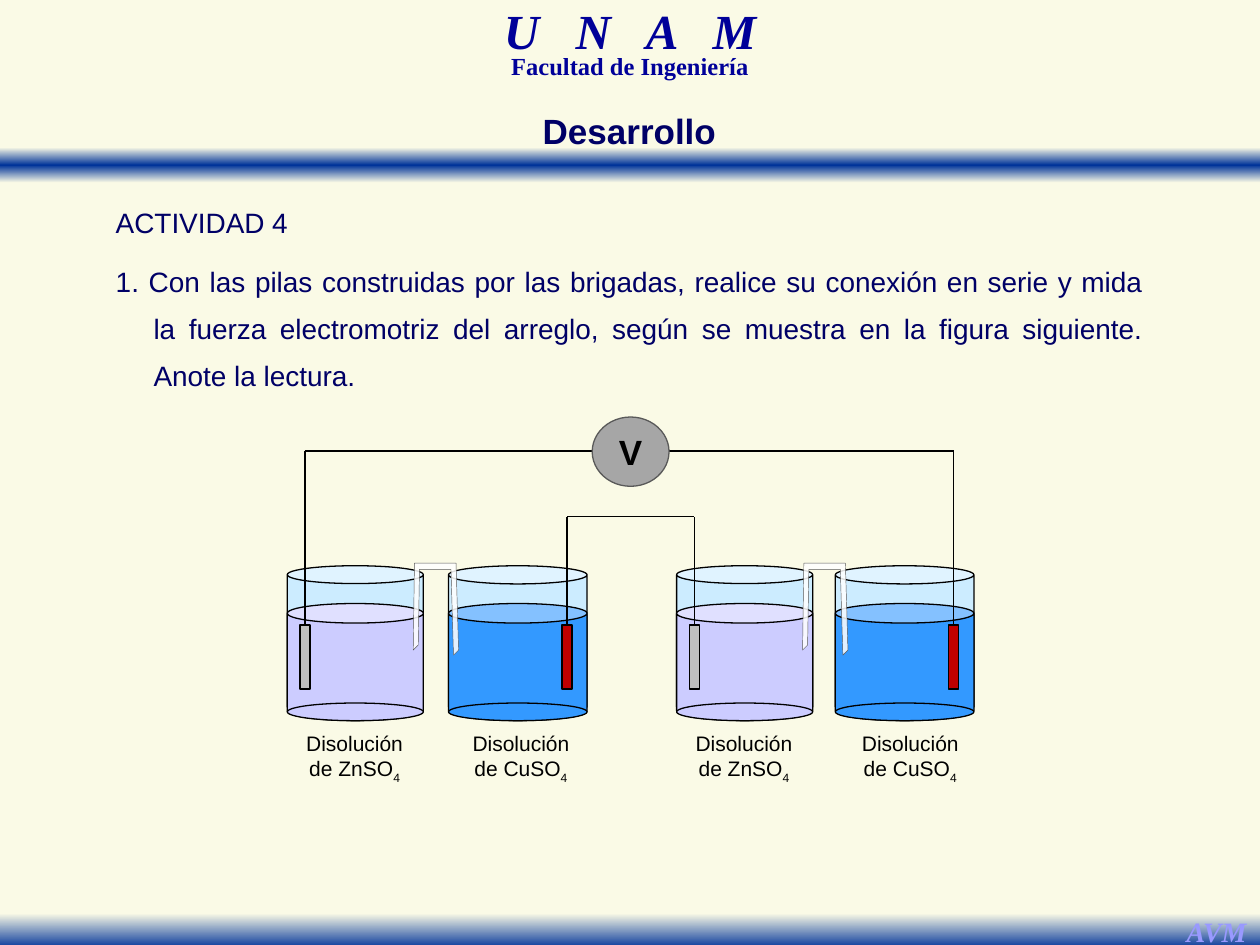
from typing import NamedTuple

from lxml.etree import SubElement
from pptx import Presentation
from pptx.dml.color import RGBColor
from pptx.enum.shapes import MSO_CONNECTOR as Link, MSO_SHAPE as Kind
from pptx.enum.text import MSO_ANCHOR as Anchor, MSO_AUTO_SIZE as Auto, PP_ALIGN as Align
from pptx.oxml import parse_xml
from pptx.oxml.ns import nsdecls, qn
from pptx.util import Pt

PX = 9144
CREAM, BLUE, NAVY, BLACK = "FAFAE6", "003399", "000066", "000000"
SANS, SERIF = "Arial", "Times New Roman"
BRIDGE = [(4, 65), (0, 69), (1, 0), (34, 0), (36, 69), (32, 73), (30, 5), (5, 5)]


class Box(NamedTuple):
    x: int
    y: int
    w: int
    h: int

    def emu(self) -> list[int]:
        return [v * PX for v in self]


class Style(NamedTuple):
    size: int
    color: str
    face: str = SANS
    bold: bool = False
    slant: bool = False


class Cell(NamedTuple):
    x: int
    w: int
    fluid: str
    salt: str
    label: int
    rod: int
    metal: str
    wire: int


ZINC, COPPER = ("CCCCFF", "de ZnSO"), ("3399FF", "de CuSO")
CELLS = [
    Cell(228, 108, *ZINC, 233, 238, "BFBFBF", 358),
    Cell(356, 110, *COPPER, 365, 446, "C00000", 410),
    Cell(537, 108, *ZINC, 542, 547, "BFBFBF", 410),
    Cell(663, 110, *COPPER, 674, 753, "C00000", 358),
]


def rgb(code: str) -> RGBColor:
    """Turn a hex string into a colour."""
    return RGBColor.from_string(code)


def style(para, look: Style, align=Align.CENTER) -> None:
    """Format one paragraph."""
    para.alignment = align
    font = para.font
    font.size, font.name = Pt(look.size), look.face
    font.bold, font.italic = look.bold, look.slant
    font.color.rgb = rgb(look.color)


def text(slide, box: Box, lines: list[str], look: Style, align=Align.CENTER, wrap=True):
    """Add a text box and return its frame."""
    frame = slide.shapes.add_textbox(*box.emu()).text_frame
    frame.word_wrap = wrap
    frame.text = "\n".join(lines)
    for para in frame.paragraphs:
        style(para, look, align)
    return frame


def paint(shape, fill: str, line: str = BLACK, width: float = 0.75) -> None:
    """Give a shape a flat fill and a thin line."""
    shape.shadow.inherit = False
    shape.fill.solid()
    shape.fill.fore_color.rgb = rgb(fill)
    shape.line.color.rgb = rgb(line)
    shape.line.width = Pt(width)


def solid(slide, kind, box: Box, fill: str, line: str = BLACK):
    """Add a filled preset shape."""
    shape = slide.shapes.add_shape(kind, *box.emu())
    paint(shape, fill, line)
    return shape


def band(slide, box: Box, stops: list[tuple[int, str]]) -> None:
    """Add a bar with a vertical gradient."""
    bar = slide.shapes.add_shape(Kind.RECTANGLE, *box.emu())
    bar.shadow.inherit = False
    bar.line.fill.background()
    bar.fill.background()
    marks = "".join(
        f'<a:gs pos="{pos * 1000}"><a:srgbClr val="{code}"/></a:gs>' for pos, code in stops
    )
    grad = parse_xml(
        f'<a:gradFill {nsdecls("a")}><a:gsLst>{marks}</a:gsLst>'
        '<a:lin ang="5400000" scaled="0"/></a:gradFill>'
    )
    props = bar._element.spPr
    props.replace(props.find(qn("a:noFill")), grad)


def wire(slide, x1: int, y1: int, x2: int, y2: int):
    """Add a thin black line."""
    line = slide.shapes.add_connector(Link.STRAIGHT, *(v * PX for v in (x1, y1, x2, y2)))
    line.line.color.rgb = rgb(BLACK)
    line.line.width = Pt(0.75)
    SubElement(line._element.spPr, qn("a:effectLst"))
    return line


def beaker(slide, cell: Cell) -> None:
    """Draw a beaker, its electrode, its wire and its label."""
    x, w = cell.x, cell.w
    for y, h, adj, fill in ((449, 119, 0.131, "CCECFF"), (479, 93, 0.167, cell.fluid)):
        solid(slide, Kind.CAN, Box(x, y, w, h), fill).adjustments[0] = adj
    solid(slide, Kind.OVAL, Box(x, 558, w, 14), cell.fluid)
    rod = solid(slide, Kind.RECTANGLE, Box(cell.rod, 496, 8, 51), cell.metal)
    mid = cell.rod + 4
    wire(slide, mid, 496, mid, cell.wire).begin_connect(rod, 0)
    box = Box(cell.label, 575, 97, 50)
    frame = text(slide, box, ["Disolución", cell.salt], Style(12, BLACK), wrap=False)
    sub = frame.paragraphs[1].add_run()
    sub.text = "4"
    sub._r.get_or_add_rPr().set("baseline", "-25000")


def bridge(slide, x: int, y: int) -> None:
    """Draw a translucent salt bridge."""
    first, *rest = [(x + dx, y + dy) for dx, dy in BRIDGE]
    path = slide.shapes.build_freeform(*first, scale=PX)
    path.add_line_segments(rest, close=True)
    shape = path.convert_to_shape()
    paint(shape, "FFFFFF", "595959", 0.25)
    tint = shape._element.spPr.find(qn("a:solidFill"))[0]
    SubElement(tint, qn("a:alpha")).set("val", "86000")


def frame_page(slide) -> None:
    """Draw the bands, the school's heading and the signature."""
    band(slide, Box(0, 117, 1000, 28), [(0, CREAM), (50, BLUE), (100, CREAM)])
    band(slide, Box(0, 725, 1000, 28), [(0, CREAM), (100, BLUE)])
    school = Style(28, "000099", SERIF, True, True)
    head = text(slide, Box(304, 8, 392, 43), ["U N A M"], school).paragraphs[0]
    head._p.pPr.find(qn("a:defRPr")).set("spc", "700")
    unit = Style(14, "000099", SERIF, True)
    sub = text(slide, Box(321, 42, 358, 26), ["Facultad de Ingeniería"], unit).paragraphs[0]
    head.line_spacing = sub.line_spacing = 0.7
    sign = Style(16, "9999FF", SERIF, True, True)
    text(slide, Box(931, 721, 69, 37), ["AVM"], sign, wrap=False)


def write(slide) -> None:
    """Place the title and the instructions."""
    title = slide.shapes.title
    title.left, title.top, title.width, title.height = Box(420, 82, 159, 44).emu()
    frame = title.text_frame
    frame.text = "Desarrollo"
    frame.word_wrap, frame.auto_size = False, Auto.NONE
    frame.vertical_anchor = Anchor.TOP
    style(frame.paragraphs[0], Style(20, NAVY, bold=True))
    slide.shapes._spTree.append(title._element)
    task = (
        "1. Con las pilas construidas por las brigadas, realice su conexión en serie "
        "y mida la fuerza electromotriz del arreglo, según se muestra en la figura "
        "siguiente. Anote la lectura."
    )
    box = Box(82, 148, 835, 167)
    body = text(slide, box, ["ACTIVIDAD 4", task], Style(16, NAVY), Align.JUSTIFY)
    for para in body.paragraphs:
        para.line_spacing, para.space_after = 1.4, Pt(6.4)
        para._p.pPr.set("marL", str(30 * PX))
        para._p.pPr.set("indent", str(-30 * PX))


def circuit(slide) -> None:
    """Draw the two cells in series with the voltmeter."""
    for cell in CELLS:
        beaker(slide, cell)
    for one, two in ((0, 3), (1, 2)):
        a, b = CELLS[one], CELLS[two]
        wire(slide, a.rod + 4, a.wire, b.rod + 4, b.wire)
    meter = solid(slide, Kind.OVAL, Box(470, 331, 61, 55), "A6A6A6", "595959")
    frame = meter.text_frame
    frame.text = "V"
    frame.vertical_anchor = Anchor.MIDDLE
    style(frame.paragraphs[0], Style(20, BLACK, bold=True))
    for x in (328, 637):
        bridge(slide, x, 447)


def main() -> None:
    """Build the slide and save it."""
    deck = Presentation()
    deck.slide_width, deck.slide_height = 1000 * PX, 750 * PX
    slide = deck.slides.add_slide(deck.slide_layouts[5])
    slide.background.fill.solid()
    slide.background.fill.fore_color.rgb = rgb(CREAM)
    frame_page(slide)
    circuit(slide)
    write(slide)
    deck.save("out.pptx")


if __name__ == "__main__":
    main()
